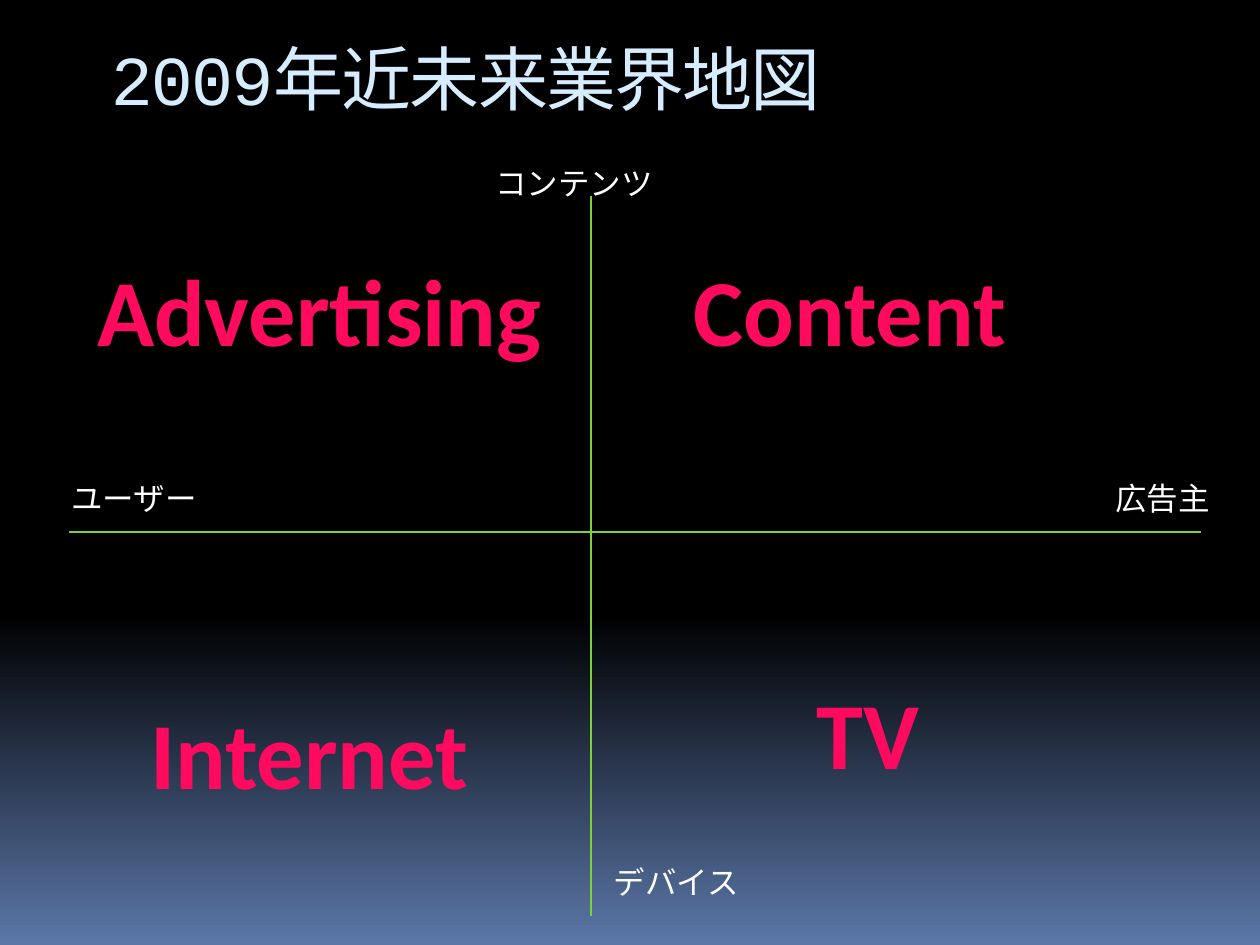
from dataclasses import dataclass

from lxml.etree import SubElement
from pptx import Presentation
from pptx.dml.color import RGBColor
from pptx.enum.shapes import MSO_CONNECTOR
from pptx.enum.text import MSO_ANCHOR, MSO_AUTO_SIZE, PP_ALIGN
from pptx.oxml.ns import qn
from pptx.util import Cm, Pt


@dataclass(frozen=True)
class Theme:
    """Colours, fonts and type sizes of the slide."""
    night: RGBColor = RGBColor(0x00, 0x00, 0x00)
    dusk: RGBColor = RGBColor(0x5B, 0x77, 0xA8)
    title: RGBColor = RGBColor(0xD6, 0xEC, 0xFF)
    sector: RGBColor = RGBColor(0xFF, 0x0A, 0x5E)
    label: RGBColor = RGBColor(0xFF, 0xFF, 0xFF)
    axis: RGBColor = RGBColor(0x7F, 0xD1, 0x3B)
    title_font: str = "Courier New"
    body_font: str = "Calibri"
    title_size: int = 40
    sector_size: int = 54
    label_size: int = 18
    axis_width: float = 0.94


THEME = Theme()

AXIS_LABELS = [
    ("ユーザー", -0.21, 5.57, 3.07),
    ("広告主", 20.83, 5.57, 2.44),
    ("コンテンツ", 8.33, -0.78, 3.71),
    ("デバイス", 10.72, 13.31, 3.07),
]
SECTORS = [
    ("Advertising", 0, 0.99, 10.08),
    ("Content", 12.09, 0.99, 7.29),
    ("Internet", 1.19, 9.93, 7.29),
    ("TV", 14.68, 9.53, 2.84),
]


def style(paragraph, font_name, size, color, align=PP_ALIGN.LEFT, bold=False):
    """Format a whole paragraph."""
    paragraph.alignment = align
    font = paragraph.font
    font.name, font.size, font.bold = font_name, Pt(size), bold
    font.color.rgb = color


def paint_background(slide):
    """Fade the background from night to dusk at the bottom."""
    fill = slide.background.fill
    fill.gradient()
    fill.gradient_angle = 270
    stops = zip(fill.gradient_stops, (0.65, 1), (THEME.night, THEME.dusk))
    for stop, position, color in stops:
        stop.position = position
        stop.color.rgb = color


def add_title(slide, text, left, top, width, height):
    """Place and format the title placeholder."""
    title = slide.shapes.title
    title.left, title.top = Cm(left), Cm(top)
    title.width, title.height = Cm(width), Cm(height)
    frame = title.text_frame
    frame.text = text
    frame.word_wrap = True
    frame.vertical_anchor = MSO_ANCHOR.TOP
    heading = frame.paragraphs[0]
    style(heading, THEME.title_font, THEME.title_size, THEME.title)
    heading.runs[0].font._element.set("spc", "-100")


def add_axis(slide, x1, y1, x2, y2):
    """Draw one axis line."""
    axis = slide.shapes.add_connector(
        MSO_CONNECTOR.STRAIGHT, Cm(x1), Cm(y1), Cm(x2), Cm(y2))
    axis.line.color.rgb = THEME.axis
    axis.line.width = Pt(THEME.axis_width)
    SubElement(axis._element.spPr, qn("a:effectLst"))


def add_caption(slide, text, left, top, width, height, **look):
    """Add a one-line text box that fits its text."""
    caption = slide.shapes.add_textbox(
        Cm(left), Cm(top), Cm(width), Cm(height))
    frame = caption.text_frame
    frame.text = text
    frame.word_wrap = False
    frame.auto_size = MSO_AUTO_SIZE.SHAPE_TO_FIT_TEXT
    style(frame.paragraphs[0], THEME.body_font, **look)


def add_industry_map(slide, left, top, width, height):
    """Draw the crossed axes with their labels and four sectors."""
    center_x, center_y = left + 10.51, top + 6.76
    add_axis(slide, left, center_y, left + width, center_y)
    add_axis(slide, center_x, top, center_x, top + height)
    for text, x, y, label_width in AXIS_LABELS:
        add_caption(slide, text, left + x, top + y, label_width, 1.02,
                    size=THEME.label_size, color=THEME.label)
    for text, x, y, sector_width in SECTORS:
        add_caption(slide, text, left + x, top + y, sector_width, 2.57,
                    size=THEME.sector_size, color=THEME.sector,
                    align=PP_ALIGN.CENTER, bold=True)


def main():
    """Build and save the slide."""
    deck = Presentation()
    deck.slide_width, deck.slide_height = Cm(25.4), Cm(19.05)
    slide = deck.slides.add_slide(deck.slide_layouts[5])
    paint_background(slide)
    add_title(slide, "2009年近未来業界地図", 1.98, 0.58, 21.59, 2.54)
    add_industry_map(slide, 1.4, 3.96, 22.81, 14.5)
    deck.save("out.pptx")


if __name__ == "__main__":
    main()
